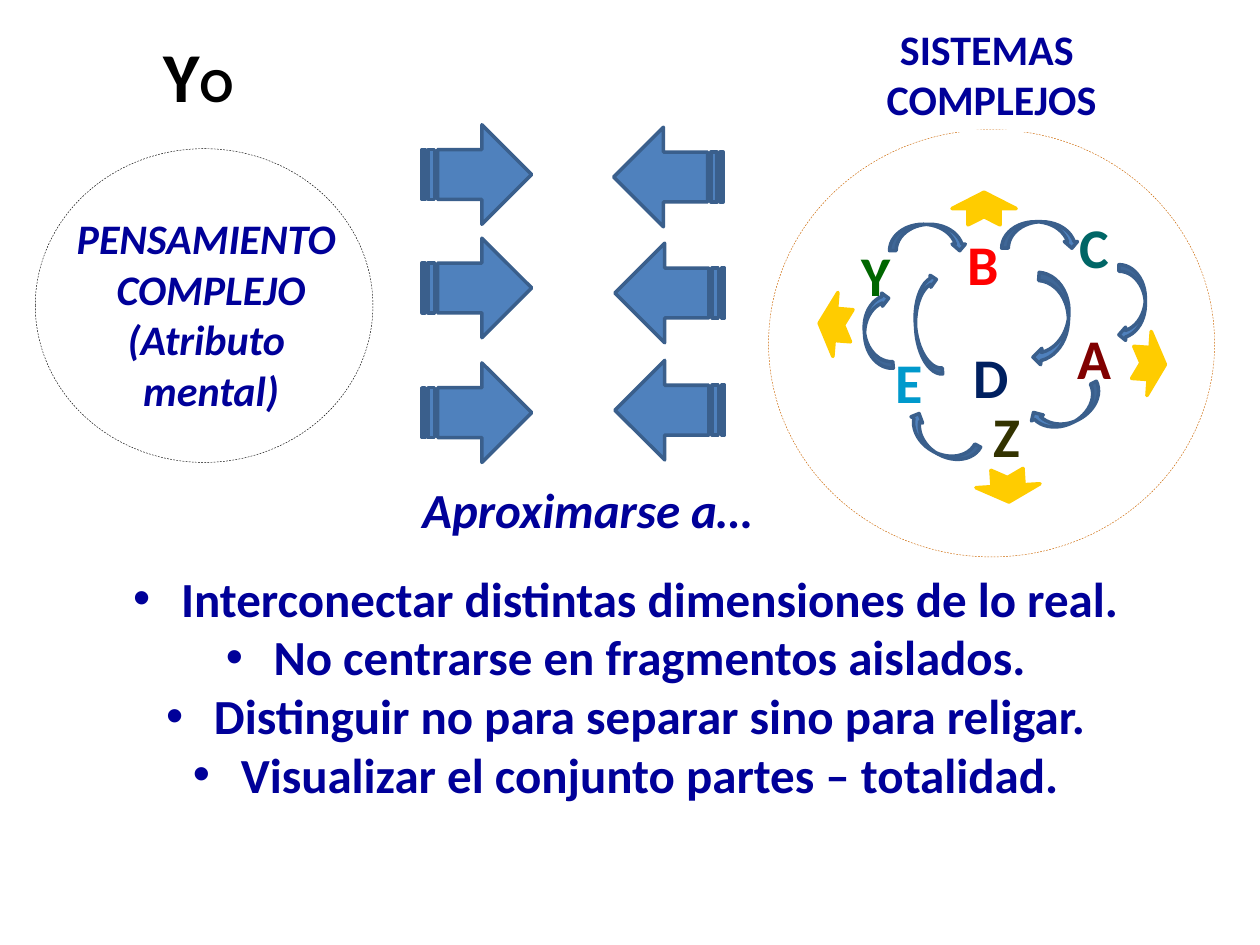
from dataclasses import dataclass

from lxml import etree
from pptx import Presentation
from pptx.dml.color import RGBColor
from pptx.enum.dml import MSO_LINE
from pptx.enum.shapes import MSO_SHAPE
from pptx.enum.text import MSO_AUTO_SIZE, PP_ALIGN
from pptx.oxml.ns import qn
from pptx.util import Pt

ELLIPSE = MSO_SHAPE.OVAL
RECTANGLE = MSO_SHAPE.RECTANGLE
STRIPED = MSO_SHAPE.STRIPED_RIGHT_ARROW
CURVED = MSO_SHAPE.CURVED_DOWN_ARROW
NOTCHED = MSO_SHAPE.NOTCHED_RIGHT_ARROW
DASH = MSO_LINE.DASH
FIT_TEXT = MSO_AUTO_SIZE.SHAPE_TO_FIT_TEXT
LEFT = PP_ALIGN.LEFT
CENTER = PP_ALIGN.CENTER
PX = 9144


@dataclass(frozen=True)
class Theme:
    font: str = "Calibri"
    navy: str = "000099"
    black: str = "000000"
    white: str = "FFFFFF"
    blue: str = "4F81BD"
    blue_edge: str = "3A5F8C"
    gold: str = "FFCC00"
    orange: str = "CC6600"
    heading: int = 40
    letter: int = 32
    body: int = 28
    label: int = 24


theme = Theme()
deck = Presentation()
deck.slide_width, deck.slide_height = 1000 * PX, 750 * PX
page = deck.slides.add_slide(deck.slide_layouts[6])


def add_figure(kind, place, fill, edge, weight, rotation=0):
    figure = page.shapes.add_shape(kind, *(length * PX for length in place))
    figure.shadow.inherit = False
    figure.rotation = rotation
    if fill:
        figure.fill.solid()
        figure.fill.fore_color.rgb = RGBColor.from_string(fill)
    else:
        figure.fill.background()
    figure.line.color.rgb = RGBColor.from_string(edge)
    figure.line.width = Pt(weight)
    return figure


def write(box, lines, size, color, align=CENTER, italic=None, wrap=False):
    frame = box.text_frame
    frame.word_wrap = wrap
    frame.auto_size = FIT_TEXT
    frame.text = "\n".join(lines)
    for para in frame.paragraphs:
        para.alignment = align
        para.font.name = theme.font
        para.font.size = Pt(size)
        para.font.bold = True
        para.font.italic = italic
        para.font.color.rgb = RGBColor.from_string(color)
    return frame


for place, edge in [
    ((28, 118, 268, 249), theme.black),
    ((610, 103, 354, 339), theme.orange),
]:
    circle = add_figure(ELLIPSE, place, theme.white, edge, 0.25)
    circle.line.dash_style = DASH

for left, top, rotation in [
    (335, 99, 0), (335, 189, 0), (335, 288, 0),
    (487, 101, 180), (488, 193, 180), (488, 286, 180),
]:
    add_figure(STRIPED, (left, top, 87, 79), theme.blue, theme.blue_edge, 2, rotation)

for letter, left, top, width, color in [
    ("A", 845, 252, 47, "800000"),
    ("B", 758, 177, 45, "FF0000"),
    ("C", 847, 164, 44, "006666"),
    ("D", 763, 267, 48, "002060"),
    ("E", 701, 271, 42, "0099CC"),
    ("Y", 674, 186, 44, "006600"),
    ("Z", 779, 314, 42, "333300"),
]:
    box = page.shapes.add_textbox(left * PX, top * PX, width * PX, 64 * PX)
    write(box, [letter], theme.letter, color, LEFT)

for left, top, width, height, rotation in [
    (706, 178, 61, 21, 0),
    (795, 176, 61, 21, 0),
    (868, 230, 61, 21, 90),
    (817, 315, 61, 21, 153.5),
    (666, 252, 61, 21, 266.2),
    (798, 241, 74, 26, 94.2),
    (716, 339, 61, 21, 208.6),
    (696, 248, 80, 19, 266.2),
]:
    add_figure(CURVED, (left, top, width, height), theme.blue, theme.blue_edge, 2, rotation)

for left, top, rotation in [
    (787, 360, 86.5), (899, 263, 3.8), (768, 140, 270), (650, 232, 184.5),
]:
    add_figure(NOTCHED, (left, top, 26, 51), theme.gold, theme.gold, 2, rotation)

self_box = page.shapes.add_textbox(120 * PX, 21 * PX, 76 * PX, 77 * PX)
self_frame = write(self_box, ["Y"], theme.heading, theme.black, LEFT)
small_span = self_frame.paragraphs[0].add_run()
small_span.text = "O"
small_span.font.size = Pt(theme.body)

systems_box = add_figure(RECTANGLE, (650, 13, 274, 91), None, theme.white, 0.75)
write(systems_box, ["SISTEMAS ", "COMPLEJOS"], theme.label, theme.navy, wrap=True)

thinking_box = page.shapes.add_textbox(50 * PX, 164 * PX, 235 * PX, 172 * PX)
thinking_lines = ["PENSAMIENTO ", "COMPLEJO", "(Atributo ", "mental)"]
write(thinking_box, thinking_lines, theme.label, theme.navy, italic=True)

approach_box = page.shapes.add_textbox(322 * PX, 376 * PX, 288 * PX, 57 * PX)
write(approach_box, ["Aproximarse a…"], theme.body, theme.navy, italic=True)

goals_box = page.shapes.add_textbox(28 * PX, 446 * PX, 937 * PX, 199 * PX)
goals = [
    "Interconectar distintas dimensiones de lo real.",
    "No centrarse en fragmentos aislados.",
    "Distinguir no para separar sino para religar.",
    "Visualizar el conjunto partes – totalidad.",
]
goals_frame = write(goals_box, goals, theme.body, theme.navy, wrap=True)
for para in goals_frame.paragraphs:
    properties = para._p.get_or_add_pPr()
    properties.set("marL", str(38 * PX))
    properties.set("indent", str(-38 * PX))
    bullet_font = etree.Element(qn("a:buFont"), typeface="Arial")
    bullet = etree.Element(qn("a:buChar"), char="•")
    properties.insert(0, bullet_font)
    properties.insert(1, bullet)

deck.save("out.pptx")
